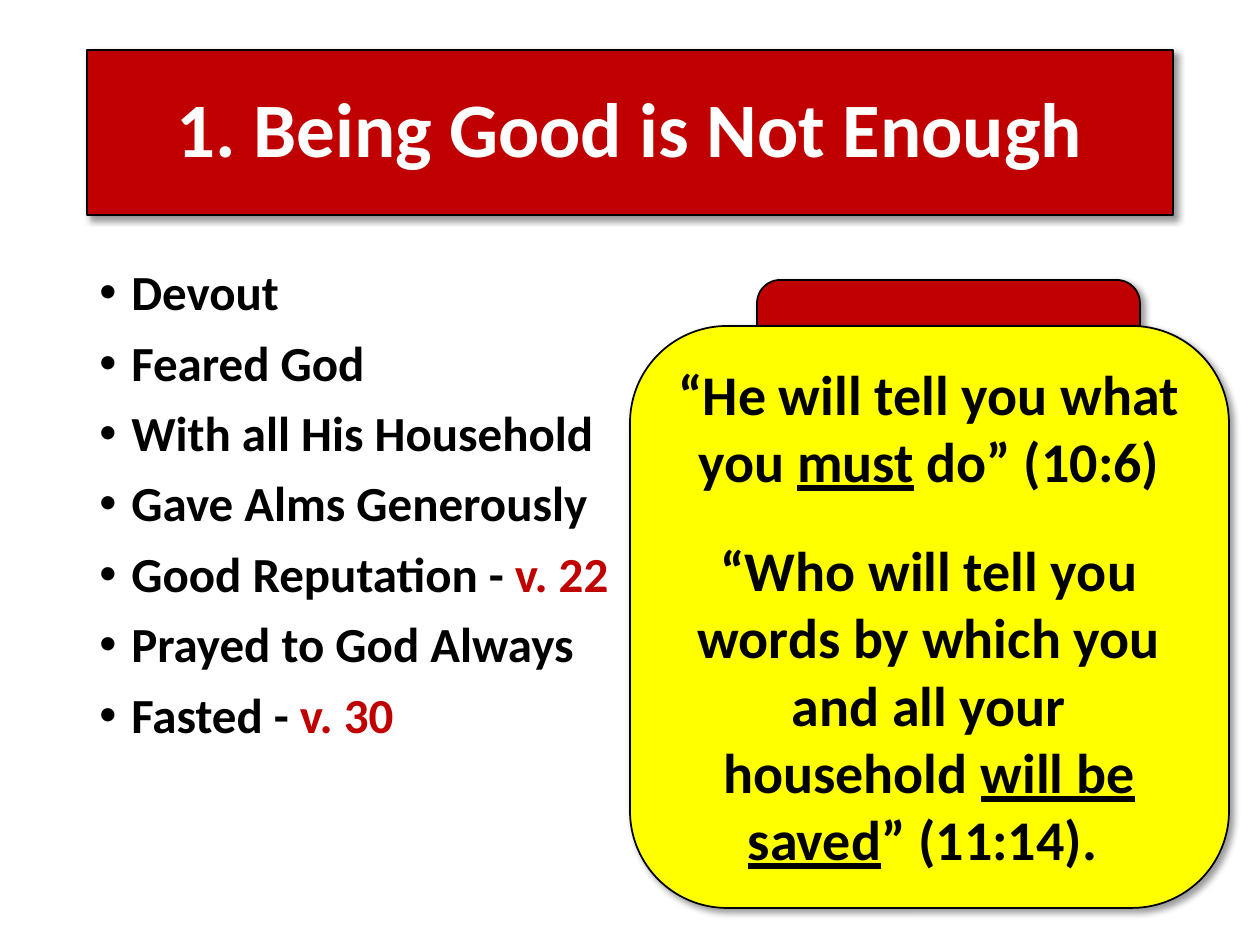
from lxml.etree import SubElement
from pptx import Presentation
from pptx.dml.color import RGBColor
from pptx.enum.shapes import MSO_SHAPE as Shape
from pptx.enum.text import MSO_ANCHOR as Anchor, PP_ALIGN as Align
from pptx.oxml.ns import qn
from pptx.util import Emu, Pt

PX = 914400 / 126
COLORS = {"red": "C00000", "yellow": "FFFF00", "black": "000000", "white": "FFFFFF"}


def px(length):
    return Emu(round(length * PX))


def rgb(name):
    return RGBColor.from_string(COLORS[name])


class SlideBuilder:
    font = "Calibri"
    indent = px(32)

    def __init__(self, deck):
        self.slide = deck.slides.add_slide(deck.slide_layouts[6])

    def panel(self, kind, box, fill, line_width=1):
        """Add an outlined, filled shape with a soft shadow."""
        panel = self.slide.shapes.add_shape(kind, *map(px, box))
        panel.shadow.inherit = False
        panel.fill.solid()
        panel.fill.fore_color.rgb = rgb(fill)
        panel.line.color.rgb = rgb("black")
        panel.line.width = Pt(line_width)
        effects = panel.element.spPr.find(qn("a:effectLst"))
        shadow = SubElement(effects, qn("a:outerShdw"), blurRad=str(Pt(4)),
                            dist=str(Pt(3)), dir="2700000", algn="tl", rotWithShape="0")
        shade = SubElement(shadow, qn("a:srgbClr"), val=COLORS["black"])
        SubElement(shade, qn("a:alpha"), val="40000")
        return panel

    def text_box(self, box):
        frame = self.slide.shapes.add_textbox(*map(px, box)).text_frame
        frame.word_wrap = True
        return frame

    def add_text(self, frame, paragraphs, size, color="black", align=Align.LEFT,
                 spacing=1.0, gap=0, accent=None, bullets=False):
        """Fill a frame; every second run is coloured by accent, or underlined without one."""
        for index, parts in enumerate(paragraphs):
            paragraph = frame.add_paragraph() if index else frame.paragraphs[0]
            if bullets:
                self.bullet(paragraph)
            paragraph.alignment = align
            paragraph.line_spacing = spacing
            paragraph.space_before = Pt(gap if index else 0)
            for position, part in enumerate(parts):
                run = paragraph.add_run()
                run.text = part
                font = run.font
                font.name, font.size, font.bold = self.font, Pt(size), True
                marked = position % 2 == 1
                font.color.rgb = rgb(accent if marked and accent else color)
                if marked and not accent:
                    font.underline = True

    def bullet(self, paragraph):
        properties = paragraph._p.get_or_add_pPr()
        properties.set("marL", str(self.indent))
        properties.set("indent", str(-self.indent))
        SubElement(properties, qn("a:buFont"), typeface="Arial")
        SubElement(properties, qn("a:buChar"), char="•")


def main():
    deck = Presentation()
    deck.slide_width, deck.slide_height = px(1260), px(945)
    builder = SlideBuilder(deck)

    title = builder.panel(Shape.RECTANGLE, (87, 50, 1086, 165), "red", 0.75).text_frame
    title.word_wrap = True
    title.vertical_anchor = Anchor.MIDDLE
    builder.add_text(title, [["1. Being Good is Not Enough"]], 44, "white", Align.CENTER, 0.9)

    virtues = [
        ["Devout"],
        ["Feared God"],
        ["With all His Household"],
        ["Gave Alms Generously"],
        ["Good Reputation - ", "v. 22"],
        ["Prayed to God Always"],
        ["Fasted - ", "v. 30"],
    ]
    builder.add_text(builder.text_box((87, 262, 1086, 600)), virtues, 28,
                     spacing=0.9, gap=10, accent="red", bullets=True)

    builder.panel(Shape.ROUNDED_RECTANGLE, (757, 280, 383, 139), "red")
    builder.panel(Shape.ROUNDED_RECTANGLE, (630, 326, 599, 582), "yellow")
    verses = [
        ["“He will tell you what you ", "must", " do” (10:6)"],
        ["“Who will tell you words by which you and all your household ",
         "will be saved", "” (11:14). "],
    ]
    builder.add_text(builder.text_box((663, 353, 532, 530)), verses, 32,
                     align=Align.CENTER, gap=24)

    deck.save("out.pptx")


if __name__ == "__main__":
    main()
